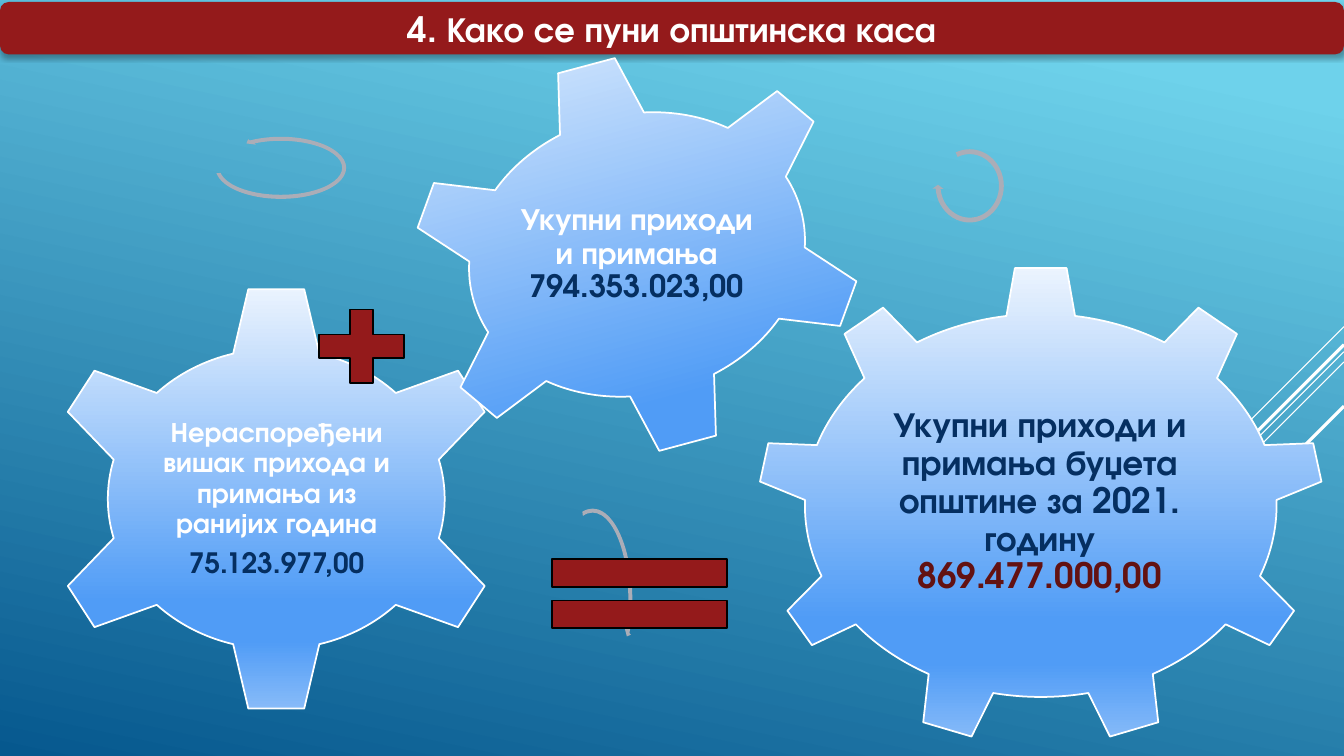
from lxml.etree import SubElement
from pptx import Presentation
from pptx.dml.color import RGBColor
from pptx.enum.shapes import MSO_CONNECTOR, MSO_SHAPE as SHAPE
from pptx.enum.text import MSO_ANCHOR, PP_ALIGN
from pptx.oxml.ns import qn
from pptx.util import Inches, Pt

WHITE = RGBColor(0xFF, 0xFF, 0xFF)
BLACK = RGBColor(0, 0, 0)
RED = RGBColor(0x94, 0x1A, 0x1B)
DARK_RED = RGBColor(0x63, 0x12, 0x12)
NAVY = RGBColor(0x05, 0x2F, 0x61)
GRAY = RGBColor(0xAB, 0xAD, 0xB7)
SKY = RGBColor(0x6E, 0xD2, 0xEB)
OCEAN = RGBColor(0x06, 0x58, 0x8E)
PALE = RGBColor(0xEC, 0xF4, 0xFE)
BLUE = RGBColor(0x50, 0x9C, 0xF6)
LIGHT_BLUE = RGBColor(0x8B, 0xBD, 0xF9)

GEAR_STOPS = [(0, PALE), (74, BLUE), (83, BLUE), (100, LIGHT_BLUE)]


class Deck:
    font = "TeX Gyre Adventor"

    def __init__(self):
        self.prs = Presentation()
        self.prs.slide_width, self.prs.slide_height = Inches(13.333), Inches(7.5)
        self.s = self.prs.slides.add_slide(self.prs.slide_layouts[6])

    def x(self, share):
        return round(self.prs.slide_width * share / 100)

    def y(self, share):
        return round(self.prs.slide_height * share / 100)

    def box(self, left, top, width, height):
        return self.x(left), self.y(top), self.x(width), self.y(height)

    def gradient(self, fill, element, stops, angle):
        fill.gradient()
        grad = element.find(".//" + qn("a:gradFill"))
        gs_lst = grad.find(qn("a:gsLst"))
        for gs in list(gs_lst):
            gs_lst.remove(gs)
        for pos, color in stops:
            gs = SubElement(gs_lst, qn("a:gs"), pos=str(pos * 1000))
            SubElement(gs, qn("a:srgbClr"), val=str(color))
        grad.find(qn("a:lin")).set("ang", str(angle * 60000))

    def background(self, stops, angle):
        self.gradient(self.s.background.fill, self.s._element, stops, angle)

    def ray(self, top, run, width):
        drop = self.x(run)
        c = self.s.shapes.add_connector(
            MSO_CONNECTOR.STRAIGHT, self.x(100), self.y(top),
            self.x(100 - run), self.y(top) + drop)
        c.line.color.rgb = WHITE
        c.line.width = Pt(width)
        SubElement(c._element.spPr, qn("a:effectLst"))

    def shape(self, kind, box, fill=None, line=None, adj=()):
        sp = self.s.shapes.add_shape(kind, *self.box(*box))
        sp.shadow.inherit = False
        for i, value in enumerate(adj):
            sp.adjustments[i] = value
        if fill is not None:
            sp.fill.solid()
            sp.fill.fore_color.rgb = fill
        if line is None:
            sp.line.fill.background()
        else:
            sp.line.color.rgb = line
            sp.line.width = Pt(1.25)
        return sp

    def gear(self, kind, box, rotation=0):
        sp = self.shape(kind, box, line=WHITE)
        self.gradient(sp.fill, sp._element.spPr, GEAR_STOPS, 90)
        sp.rotation = rotation

    def add_runs(self, p, runs, size):
        p.alignment = PP_ALIGN.CENTER
        for text, color in runs:
            r = p.add_run()
            r.text = text
            r.font.name = self.font
            r.font.size = Pt(size)
            r.font.bold = True
            r.font.color.rgb = color

    def label(self, box, paragraphs, size):
        tf = self.s.shapes.add_textbox(*self.box(*box)).text_frame
        tf.word_wrap = True
        tf.vertical_anchor = MSO_ANCHOR.MIDDLE
        tf.margin_left = tf.margin_right = Inches(0.03)
        tf.margin_top = tf.margin_bottom = Inches(0.03)
        for i, runs in enumerate(paragraphs):
            p = tf.add_paragraph() if i else tf.paragraphs[0]
            p.line_spacing = 0.9
            p.space_after = Pt(size * 0.35)
            self.add_runs(p, runs, size)

    def banner(self, box, text):
        sp = self.shape(SHAPE.ROUNDED_RECTANGLE, box, RED)
        effects = sp._element.spPr.find(qn("a:effectLst"))
        shadow = SubElement(effects, qn("a:outerShdw"), blurRad=str(Pt(3.5)),
                            dist=str(Pt(2.2)), dir="5400000", rotWithShape="0")
        color = SubElement(shadow, qn("a:srgbClr"), val=str(BLACK))
        SubElement(color, qn("a:alpha"), val="32000")
        tf = sp.text_frame
        tf.vertical_anchor = MSO_ANCHOR.MIDDLE
        self.add_runs(tf.paragraphs[0], [(text, WHITE)], 25)


def main():
    d = Deck()
    d.background([(10, SKY), (100, OCEAN)], 102)
    for ray in [(43.2, 7.5, 0.75), (46.53, 24.45, 0.75), (47.87, 15.53, 0.75),
                (45.6, 14.33, 2.25), (53.73, 10.43, 2.25)]:
        d.ray(*ray)
    d.banner((0, 0.27, 100, 6.93), "4. Како се пуни општинска каса")

    d.gear(SHAPE.GEAR_9, (56.33, 35.2, 42.22, 63.33))
    d.label((64.28, 50.13, 26.18, 32.53),
            [[("Укупни приходи и примања буџета општине за 2021. годину ", NAVY),
              ("869.477.000,00", DARK_RED)]], 25)
    d.gear(SHAPE.GEAR_6, (3.23, 37.6, 34.65, 56.8))
    d.label((11.7, 52, 17.78, 28),
            [[("Нераспоређени вишак прихода и примања из ранијих година", WHITE)],
             [("75.123.977,00", NAVY)]], 20)
    d.gear(SHAPE.GEAR_6, (30.3, 7.2, 34.2, 52.93), 345)
    d.label((38.03, 18.27, 18.68, 30.67),
            [[("Укупни приходи и примања ", WHITE),
              ("794.353.023,00", NAVY)]], 22)

    d.shape(SHAPE.CIRCULAR_ARROW, (40.95, 66.93, 6.3, 24.67), GRAY,
            adj=(0.047, 2.99, 25.464, 157.977, 0.055))
    d.shape(SHAPE.CIRCULAR_ARROW, (69.38, 19.33, 5.55, 10.53), GRAY,
            adj=(0.065, 4.3, 104.891, 148.378, 0.075))
    d.shape(SHAPE.LEFT_CIRCULAR_ARROW, (15.83, 17.73, 10.13, 8.93), GRAY,
            adj=(0.06, 3.941, 133.138, 105.082, 0.07))
    d.shape(SHAPE.MATH_PLUS, (22.58, 39.2, 8.63, 13.2), RED, BLACK)
    d.shape(SHAPE.MATH_EQUAL, (38.7, 70.8, 17.78, 15.47), RED, BLACK)
    d.prs.save("out.pptx")


if __name__ == "__main__":
    main()
